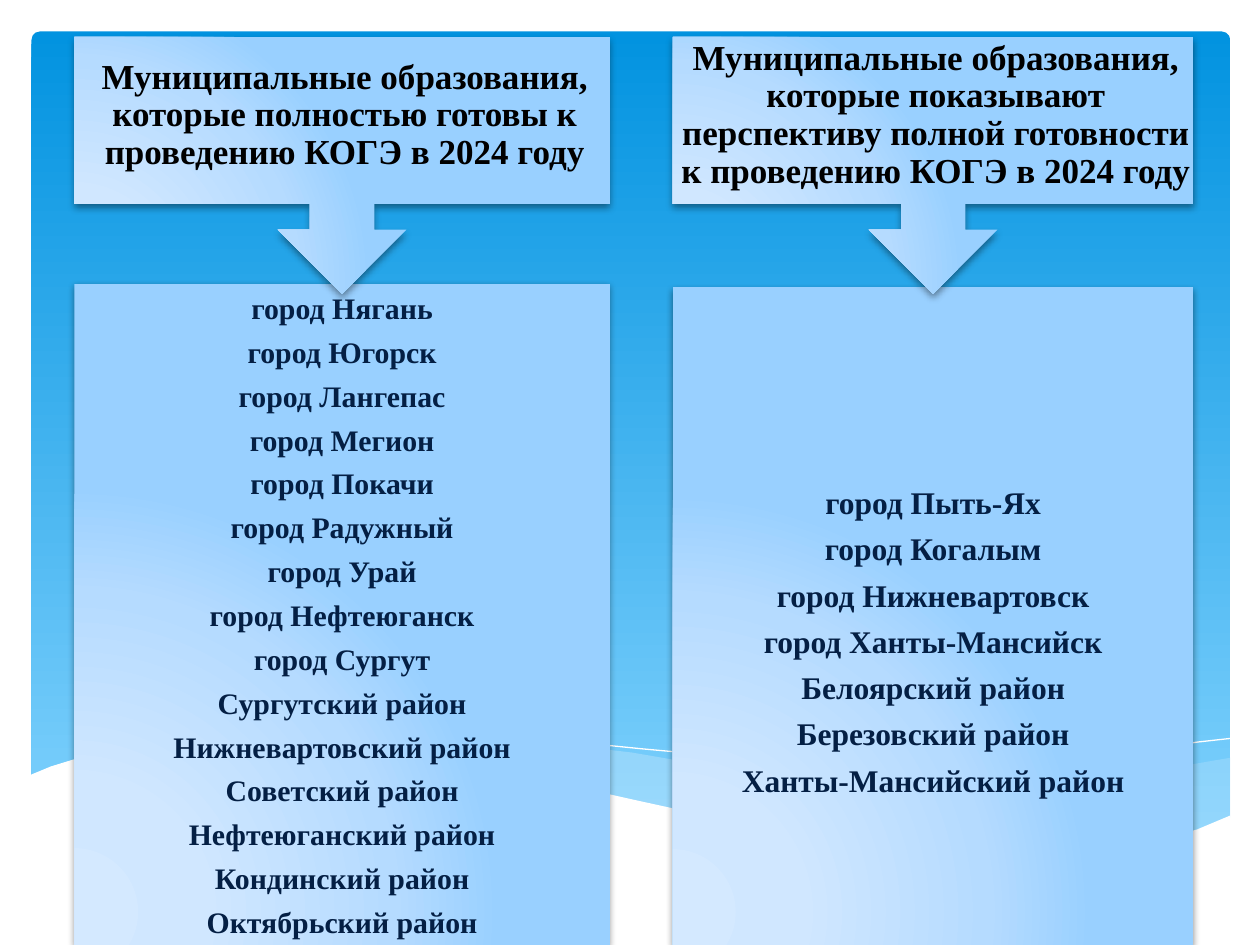
from dataclasses import dataclass

from lxml import etree
from pptx import Presentation
from pptx.dml.color import RGBColor
from pptx.enum.shapes import MSO_SHAPE
from pptx.enum.text import MSO_ANCHOR, PP_ALIGN
from pptx.oxml.ns import qn
from pptx.util import Pt

RECT = MSO_SHAPE.RECTANGLE
ROUNDED = MSO_SHAPE.ROUNDED_RECTANGLE
CALLOUT = MSO_SHAPE.UP_ARROW_CALLOUT
MIDDLE = MSO_ANCHOR.MIDDLE
CENTER = PP_ALIGN.CENTER


@dataclass(frozen=True)
class Theme:
    """Colours, font and type sizes of the slide."""
    font: str = "Times New Roman"
    white: str = "FFFFFF"
    wave: str = "C6E7FC"
    heading: str = "000000"
    body: str = "041F44"
    sky: tuple = ((0, "0293E0"), (100, "83D3FE"))
    panel: tuple = ((0, "D4E9FF"), (30, "D0E7FF"), (75, "B5DBFF"), (100, "99D0FF"))
    heading_size: float = 20
    left_size: float = 17
    right_size: float = 18


THEME = Theme()
DOWNWARD = {"lin": {"ang": "5400000", "scaled": "0"}}
FROM_CORNER = {
    "path": {"path": "circle"},
    "fillToRect": {"l": "5000", "t": "100000", "r": "120000", "b": "10000"},
}

RIGHT_WAVE = [
    (703, 433), (674, 438.5), (642, 445), (621, 450), (580, 460), (543, 468),
    (509, 474.5), (477, 480), (508, 484.5), (537, 487.5), (579, 489.5),
    (616, 488), (647, 484), (675, 477.5), (703, 467),
]
MIDDLE_WAVE = [
    (644, 486), (603, 480), (559, 472), (509, 462), (454, 449), (420, 441.5),
    (390, 435), (361, 430.5), (335, 427), (302, 424), (274, 422.5), (248, 423),
    (226, 424.5), (207, 427), (233, 430.5), (261, 435), (291, 441), (324, 449),
    (382, 462), (433, 473), (480, 481), (521, 486.5), (557, 489), (590, 489.5),
    (618, 489),
]
LONG_CREST = [
    (223, 430), (237, 428), (254, 425.5), (279, 424), (312, 424), (338, 425),
    (368, 427.5), (401, 431), (438, 436), (480, 443), (524, 452), (573, 463),
    (626, 476.5), (654, 484.5),
]
SHORT_CREST = [
    (442, 474.5), (470, 466.5), (501, 458.5), (539, 450), (581, 440.5),
    (624, 432), (656, 428), (685, 424), (703, 422.5),
]
WHITE_BASE = [
    (703, 466.5), (684, 474), (655, 481.5), (621, 486), (583, 488.5),
    (548, 487.5), (510, 484), (466, 478), (417, 469), (362, 457), (322, 448),
    (281, 438.5), (245, 431), (210, 426), (180, 423.5), (152, 422), (127, 422),
    (105, 422.5), (86, 424), (68, 427), (55, 430), (42, 433.5), (29, 437.5),
    (17, 443), (17, 526.5), (703, 526.5),
]

READY = [
    "город Нягань", "город Югорск", "город Лангепас", "город Мегион",
    "город Покачи", "город Радужный", "город Урай", "город Нефтеюганск",
    "город Сургут", "Сургутский район", "Нижневартовский район",
    "Советский район", "Нефтеюганский район", "Кондинский район",
    "Октябрьский район",
]
PROMISING = [
    "город Пыть-Ях", "город Когалым", "город Нижневартовск",
    "город Ханты-Мансийск", "Белоярский район", "Березовский район",
    "Ханты-Мансийский район",
]


def child(parent, tag, **attrs):
    """Append a DrawingML element to parent."""
    return etree.SubElement(parent, qn(f"a:{tag}"), attrs)


def add_gradient_shape(s, kind, box, stops, direction):
    """Add a borderless preset shape with a gradient fill."""
    sp = s.shapes.add_shape(kind, *map(Pt, box))
    sp.shadow.inherit = False
    sp.line.fill.background()
    spPr = sp._element.spPr
    grad = etree.Element(qn("a:gradFill"), rotWithShape="1")
    spPr.insert(2, grad)
    stop_list = child(grad, "gsLst")
    for position, color in stops:
        stop = child(stop_list, "gs", pos=str(position * 1000))
        child(stop, "srgbClr", val=color)
    parent = grad
    for tag, attrs in direction.items():
        parent = child(parent, tag, **attrs)
    return sp


def add_panel(s, kind, box):
    """Add a pale blue panel with a soft shadow below it."""
    sp = add_gradient_shape(s, kind, box, THEME.panel, FROM_CORNER)
    effects = sp._element.spPr.find(qn("a:effectLst"))
    shadow = child(effects, "outerShdw", blurRad=str(Pt(4)), dist=str(Pt(2)),
                   dir="5400000", rotWithShape="0")
    child(child(shadow, "srgbClr", val="000000"), "alpha", val="40000")
    return sp


def add_outline(s, points, closed):
    """Add a freeform through the points, without shadow."""
    builder = s.shapes.build_freeform(*points[0], scale=Pt(1))
    builder.add_line_segments(points[1:], close=closed)
    sp = builder.convert_to_shape()
    sp.shadow.inherit = False
    return sp


def add_wave(s, points, color, opacity=100):
    """Add a filled wave."""
    sp = add_outline(s, points, True)
    sp.fill.solid()
    sp.fill.fore_color.rgb = RGBColor.from_string(color)
    sp.line.fill.background()
    if opacity < 100:
        fill = sp._element.spPr.find(qn("a:solidFill"))
        child(fill[0], "alpha", val=str(opacity * 1000))


def add_crest(s, points):
    """Add a white hairline curve."""
    sp = add_outline(s, points, False)
    sp.fill.background()
    sp.line.color.rgb = RGBColor.from_string(THEME.white)
    sp.line.width = Pt(0)


def add_text(s, box, lines, size, color, insets, gap=0):
    """Add centred bold lines in a text box."""
    tf = s.shapes.add_textbox(*map(Pt, box)).text_frame
    tf.word_wrap = True
    tf.vertical_anchor = MIDDLE
    tf.margin_left, tf.margin_top, tf.margin_right, tf.margin_bottom = map(Pt, insets)
    for i, line in enumerate(lines):
        p = tf.paragraphs[0] if i == 0 else tf.add_paragraph()
        p.text = line
        p.alignment = CENTER
        p.line_spacing = 0.9
        p.space_after = Pt(gap)
        p.font.name = THEME.font
        p.font.size = Pt(size)
        p.font.bold = True
        p.font.color.rgb = RGBColor.from_string(color)


def add_column(s, left, width, top, heading, places, size, gap, inset):
    """Add a list panel with a heading callout pointing down to it."""
    body = (left, top, width, 540 - top)
    add_panel(s, RECT, body)
    add_text(s, body, places, size, THEME.body, (11.5, inset, 11.5, 0), gap)
    add_panel(s, CALLOUT, (left, 21, width, 147)).rotation = 180
    add_text(s, (left, 21, width, 95.5), [heading], THEME.heading_size,
             THEME.heading, (3, 6, 0, 11.5))


def main():
    """Build and save the slide."""
    prs = Presentation()
    prs.slide_width, prs.slide_height = Pt(720), Pt(540)
    s = prs.slides.add_slide(prs.slide_layouts[6])
    sky = add_gradient_shape(s, ROUNDED, (18, 18, 685, 475), THEME.sky, DOWNWARD)
    sky.adjustments[0] = 0.01
    add_wave(s, RIGHT_WAVE, THEME.wave, 29)
    add_wave(s, MIDDLE_WAVE, THEME.wave, 40)
    add_crest(s, LONG_CREST)
    add_crest(s, SHORT_CREST)
    add_wave(s, WHITE_BASE, THEME.white)
    add_column(s, 384.5, 297.5, 164, "Муниципальные образования, которые показывают "
               "перспективу полной готовности к проведению КОГЭ в 2024 году",
               PROMISING, THEME.right_size, 7, 31)
    add_column(s, 42.5, 306, 162, "Муниципальные образования, которые полностью "
               "готовы к проведению КОГЭ в 2024 году",
               READY, THEME.left_size, 6.7, 3)
    prs.save("out.pptx")


if __name__ == "__main__":
    main()
